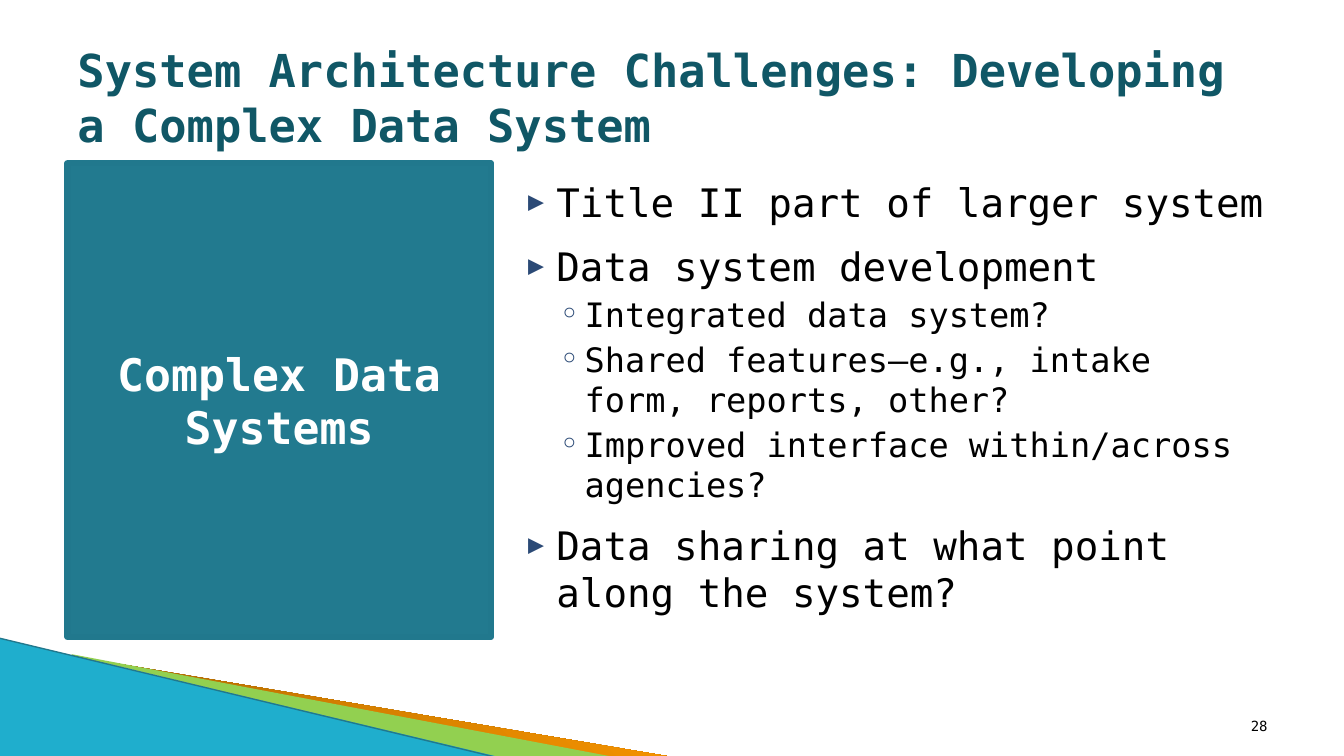
from lxml import etree
from pptx import Presentation
from pptx.dml.color import RGBColor
from pptx.enum.shapes import MSO_CONNECTOR, MSO_SHAPE
from pptx.enum.text import MSO_ANCHOR, PP_ALIGN
from pptx.oxml.ns import qn
from pptx.util import Pt

PX = 9144
FONT = "DejaVu Sans Mono"
LEFT, CENTER, RIGHT = PP_ALIGN.LEFT, PP_ALIGN.CENTER, PP_ALIGN.RIGHT
TOP, MIDDLE, BOTTOM = MSO_ANCHOR.TOP, MSO_ANCHOR.MIDDLE, MSO_ANCHOR.BOTTOM
PARALLELOGRAM = MSO_SHAPE.PARALLELOGRAM
RIGHT_TRIANGLE = MSO_SHAPE.RIGHT_TRIANGLE
STRAIGHT = MSO_CONNECTOR.STRAIGHT

BULLET_COLOR = "2B4A76"
LEVELS = [
    {"size": 28, "before": 12, "margin": 40, "hanging": 28, "bullet": "▶", "percent": 68},
    {"size": 24, "before": 3.2, "margin": 68, "hanging": 25, "bullet": "◦", "percent": 100},
]
CHALLENGES = [
    (0, "Title II part of larger system"),
    (0, "Data system development"),
    (1, "Integrated data system?"),
    (1, "Shared features—e.g., intake form, reports, other?"),
    (1, "Improved interface within/across agencies?"),
    (0, "Data sharing at what point along the system?"),
]


def color(value):
    """Turn a hex string into a colour."""
    return RGBColor.from_string(value)


def box(left, top, width, height):
    """Turn a box in px into EMU."""
    return [value * PX for value in (left, top, width, height)]


def paint(shape, fill, line=None, line_width=0):
    """Set the fill and outline of a shape and drop its shadow."""
    shape.shadow.inherit = False
    shape.fill.solid()
    shape.fill.fore_color.rgb = color(fill)
    if line:
        shape.line.color.rgb = color(line)
        shape.line.width = Pt(line_width)
    else:
        shape.line.fill.background()


def paint_gradient(shape, stops, angle):
    """Fill a shape with a linear gradient of (percent, hex) stops."""
    shape.fill.gradient()
    shape.fill.gradient_angle = angle
    stop_list = shape.element.spPr.find(".//" + qn("a:gsLst"))
    for stop in list(stop_list):
        stop_list.remove(stop)
    for percent, value in stops:
        stop = etree.SubElement(stop_list, qn("a:gs"), pos=str(percent * 1000))
        etree.SubElement(stop, qn("a:srgbClr"), val=value)


def add_preset(slide, kind, place, fill, **outline):
    """Add a painted preset shape."""
    shape = slide.shapes.add_shape(kind, *box(*place))
    paint(shape, fill, **outline)
    return shape


def add_wedge(slide, points, fill):
    """Add a closed polygon through points in px."""
    builder = slide.shapes.build_freeform(*points[0], scale=PX)
    builder.add_line_segments(points[1:], close=True)
    shape = builder.convert_to_shape()
    paint(shape, fill)
    return shape


def add_line(slide, start, end, value, width):
    """Add a straight line without a shadow."""
    ends = [number * PX for number in start + end]
    line = slide.shapes.add_connector(STRAIGHT, *ends)
    line.line.color.rgb = color(value)
    line.line.width = Pt(width)
    etree.SubElement(line.element.spPr, qn("a:effectLst"))


def add_text_box(slide, place, anchor):
    """Add an empty wrapping text box and return its text frame."""
    frame = slide.shapes.add_textbox(*box(*place)).text_frame
    frame.word_wrap = True
    frame.vertical_anchor = anchor
    return frame


def write(paragraph, text, size, fill="000000", bold=False, align=LEFT):
    """Write formatted text into a paragraph."""
    paragraph.alignment = align
    run = paragraph.add_run()
    run.text = text
    run.font.name = FONT
    run.font.size = Pt(size)
    run.font.bold = bold
    run.font.color.rgb = color(fill)


def add_bullet(paragraph, level):
    """Give a paragraph the indent and bullet of its level."""
    properties = paragraph._p.get_or_add_pPr()
    properties.set("marL", str(level["margin"] * PX))
    properties.set("indent", str(-level["hanging"] * PX))
    bullet_color = etree.SubElement(properties, qn("a:buClr"))
    etree.SubElement(bullet_color, qn("a:srgbClr"), val=BULLET_COLOR)
    etree.SubElement(properties, qn("a:buSzPct"), val=str(level["percent"] * 1000))
    etree.SubElement(properties, qn("a:buFont"), typeface=FONT)
    etree.SubElement(properties, qn("a:buChar"), char=level["bullet"])


def write_list(frame, items):
    """Write (level, text) items as a bulleted list."""
    for index, (depth, text) in enumerate(items):
        level = LEVELS[depth]
        paragraph = frame.add_paragraph() if index else frame.paragraphs[0]
        paragraph.level = depth
        add_bullet(paragraph, level)
        if index:
            paragraph.space_before = Pt(level["before"])
        write(paragraph, text, level["size"])


def add_corner(slide):
    """Add the coloured wedges in the lower left corner."""
    orange = add_wedge(slide, [(73, 651), (667, 751), (514, 751), (73, 650)], "D78100")
    paint_gradient(orange, [(0, "975B00"), (50, "D78100"), (100, "FF9900")], 45)
    add_wedge(slide, [(71, 649), (609, 751), (496, 752), (72, 650)], "92D050")
    add_preset(slide, RIGHT_TRIANGLE, (-1, 633, 496, 118), "1FAECD")
    add_line(slide, (-1, 633), (495, 752), "21788D", 0.95)


def main():
    """Build the slide and save it."""
    presentation = Presentation()
    presentation.slide_width = 1333 * PX
    presentation.slide_height = 750 * PX
    slide = presentation.slides.add_slide(presentation.slide_layouts[6])
    add_corner(slide)

    title = add_text_box(slide, (67, 30, 1200, 125), BOTTOM)
    write(title.paragraphs[0],
          "System Architecture Challenges: Developing a Complex Data System",
          32.4, fill="105766", bold=True)

    panel = add_preset(slide, PARALLELOGRAM, (67, 162, 420, 470), "227A8F",
                       line="21788D", line_width=4.33)
    panel.adjustments[0] = 0
    panel.text_frame.word_wrap = True
    panel.text_frame.vertical_anchor = MIDDLE
    write(panel.text_frame.paragraphs[0], "Complex Data Systems", 32,
          fill="FFFFFF", bold=True, align=CENTER)

    write_list(add_text_box(slide, (502, 162, 765, 463), MIDDLE), CHALLENGES)

    number = add_text_box(slide, (1178, 707, 89, 21), TOP)
    write(number.paragraphs[0], "28", 10, align=RIGHT)
    presentation.save("out.pptx")


if __name__ == "__main__":
    main()
